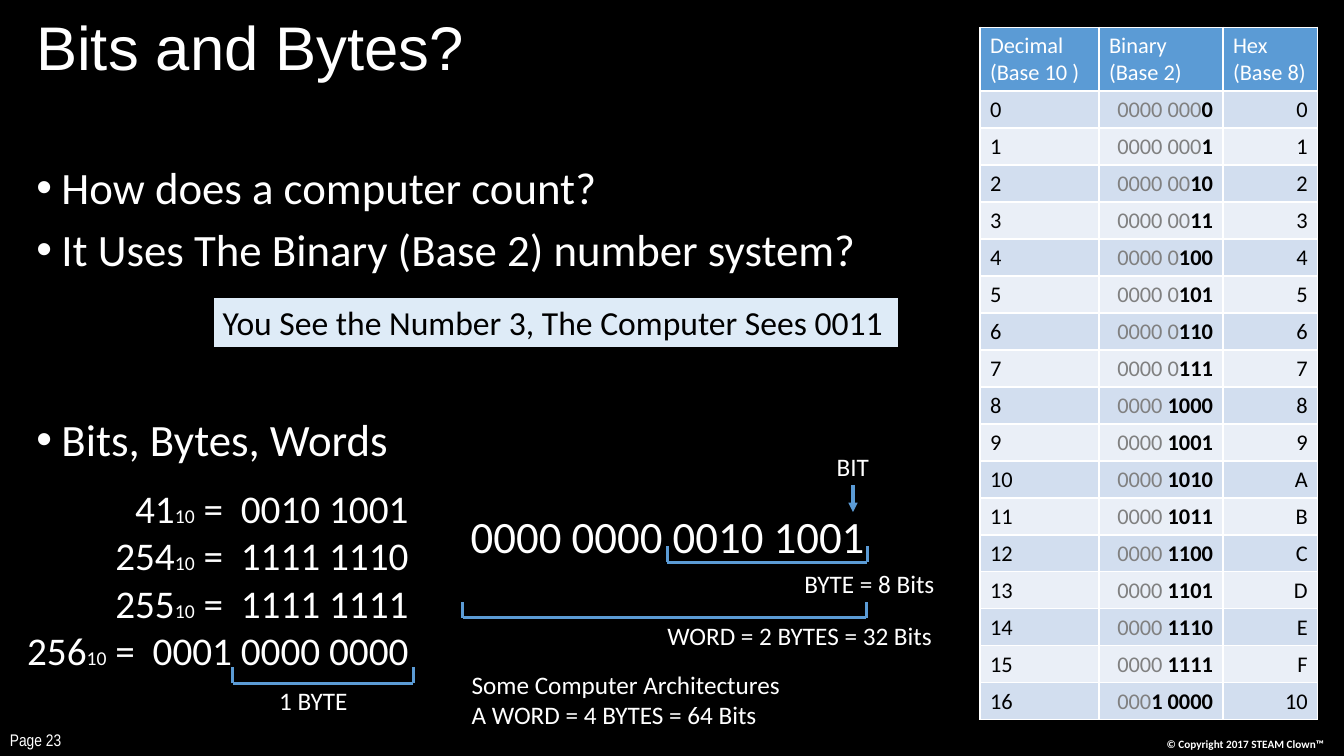
import pptx
import pptx.dml.color
import pptx.enum.shapes
import pptx.enum.text
import pptx.oxml
import pptx.oxml.ns
import pptx.util

RGBColor = pptx.dml.color.RGBColor
Align = pptx.enum.text.PP_ALIGN
AutoSize = pptx.enum.text.MSO_AUTO_SIZE
Anchor = pptx.enum.text.MSO_ANCHOR

BLACK = RGBColor(0x00, 0x00, 0x00)
WHITE = RGBColor(0xFF, 0xFF, 0xFF)
GREY = RGBColor(0x80, 0x80, 0x80)
BLUE = RGBColor(0x5B, 0x9B, 0xD5)
PALE_BLUE = RGBColor(0xDE, 0xEB, 0xF7)
BAND_DARK = RGBColor(0xD2, 0xDE, 0xEF)
BAND_LIGHT = RGBColor(0xEA, 0xEF, 0xF7)

EMU_PER_PX = 9144  # 100 px to the inch


def px(length):
    return pptx.util.Emu(length * EMU_PER_PX)


def add_xml(parent, xml, index=None):
    tag, rest = xml.split(" ", 1) if " " in xml else (xml, "")
    element = pptx.oxml.parse_xml(f"<a:{tag} {pptx.oxml.ns.nsdecls('a')} {rest}")
    parent.insert(len(parent) if index is None else index, element)


def format_font(font, size, color=WHITE, name="Calibri", bold=False):
    values = {"name": name, "size": pptx.util.Pt(size), "bold": bold}
    for attribute, value in values.items():
        setattr(font, attribute, value)
    font.color.rgb = color


def add_run(paragraph, text, size, **formats):
    run = paragraph.add_run()
    run.text = text
    format_font(run.font, size, **formats)


def place(shape, box):
    for attribute, length in zip(("left", "top", "width", "height"), box):
        setattr(shape, attribute, px(length))


def fill_frame(frame, lines, wrap, align=Align.LEFT):
    """Write one paragraph per line, each a list of (text, size, formats) runs."""
    values = {"word_wrap": wrap, "auto_size": AutoSize.SHAPE_TO_FIT_TEXT,
              "vertical_anchor": Anchor.TOP}
    for attribute, value in values.items():
        setattr(frame, attribute, value)
    for index, runs in enumerate(lines):
        paragraph = frame.add_paragraph() if index else frame.paragraphs[0]
        paragraph.alignment = align
        for text, size, formats in runs:
            add_run(paragraph, text, size, **formats)


def add_label(slide, box, *texts, size=18, wrap=False, **formats):
    label = slide.shapes.add_textbox(*map(px, box))
    fill_frame(label.text_frame, [[(text, size, formats)] for text in texts], wrap)
    return label


def add_line(slide, start, end, arrow=False):
    line = slide.shapes.add_connector(
        pptx.enum.shapes.MSO_CONNECTOR.STRAIGHT, *map(px, (*start, *end)))
    line.line.color.rgb = BLUE
    line.line.width = pptx.util.Pt(2.25)
    properties = line.element.spPr
    if arrow:
        add_xml(properties.find(pptx.oxml.ns.qn("a:ln")), 'tailEnd type="triangle"/>')
    add_xml(properties, "effectLst />")


def add_bracket(slide, left, right, bottom, tick=16):
    add_line(slide, (left, bottom), (right, bottom))
    for x in (left, right):
        add_line(slide, (x, bottom), (x, bottom - tick))


def add_title(slide, box):
    title = slide.shapes.title
    place(title, box)
    title.text_frame.vertical_anchor = Anchor.TOP
    title.text_frame.auto_size = AutoSize.NONE
    paragraph = title.text_frame.paragraphs[0]
    paragraph.alignment = Align.LEFT
    paragraph.line_spacing = 0.9
    add_run(paragraph, "Bits and Bytes?", 44, name="Arial")


def add_bullets(slide, box):
    body = slide.placeholders[1]
    place(body, box)
    frame = body.text_frame
    frame.auto_size = AutoSize.NONE
    bullets = (("How does a computer count?", 0),
               ("It Uses The Binary (Base 2) number system?", 10),
               ("Bits, Bytes, Words", 101))
    for index, (text, space_before) in enumerate(bullets):
        paragraph = frame.add_paragraph() if index else frame.paragraphs[0]
        properties = paragraph._p.get_or_add_pPr()
        properties.set("marL", str(px(25)))
        properties.set("indent", str(px(-25)))
        add_xml(properties, 'buFont typeface="Arial"/>')
        add_xml(properties, 'buChar char="•"/>')
        paragraph.line_spacing = 0.9
        paragraph.space_before = pptx.util.Pt(space_before)
        add_run(paragraph, text, 32)


def add_callout(slide, box):
    callout = slide.shapes.add_shape(
        pptx.enum.shapes.MSO_SHAPE.RECTANGLE, *map(px, box))
    callout.shadow.inherit = False
    callout.fill.solid()
    callout.fill.fore_color.rgb = PALE_BLUE
    callout.line.color.rgb = BLACK
    callout.line.width = pptx.util.Pt(1.5)
    text = "You See the Number 3, The Computer Sees 0011"
    fill_frame(callout.text_frame, [[(text, 24, {"color": BLACK})]], wrap=False)


def fill_cell(cell, fill, runs, align=Align.LEFT):
    properties = cell._tc.get_or_add_tcPr()
    for side in "LRTB":
        add_xml(properties, f'ln{side} w="12700"><a:solidFill>'
                            f'<a:srgbClr val="{WHITE}"/></a:solidFill></a:ln{side}>')
    cell.fill.solid()
    cell.fill.fore_color.rgb = fill
    paragraph = cell.text_frame.paragraphs[0]
    paragraph.alignment = align
    for text, formats in runs:
        add_run(paragraph, text, 16, **formats)


def add_number_table(slide, box, count=17):
    """Count in decimal, binary and hex, with the leading zeros in grey."""
    table = slide.shapes.add_table(count + 1, 3, *map(px, box)).table
    table.first_row = table.horz_banding = False
    for column, width in zip(table.columns, (118, 123, 94)):
        column.width = px(width)
    for index, row in enumerate(table.rows):
        row.height = px(36 if index else 63)
    headings = ("Decimal (Base 10 )", "Binary (Base 2)", "Hex (Base 8)")
    for column, heading in enumerate(headings):
        fill_cell(table.cell(0, column), BLUE, [(heading, {})])
    black = {"color": BLACK}
    for number in range(count):
        bits = f"{number >> 4:04b} {number & 15:04b}"
        significant = bits.lstrip("0 ") or "0"
        zeros = bits[:-len(significant)]
        columns = (
            ([(str(number), black)], Align.LEFT),
            ([(zeros, {"color": GREY}), (significant, {**black, "bold": True})],
             Align.RIGHT),
            ([(f"{number:X}", black)], Align.RIGHT))
        band = BAND_LIGHT if number % 2 else BAND_DARK
        for column, (runs, align) in enumerate(columns):
            fill_cell(table.cell(number + 1, column), band, runs, align)


def add_conversions(slide, left, top):
    conversions = (("41", "0010 1001"), ("254", "1111 1110"),
                   ("255", "1111 1111"), ("256", "0001 0000 0000"))
    lines = [[(decimal, 28, {}), ("10", 14, {}), (f" =  {binary}", 28, {})]
             for decimal, binary in conversions]
    box = slide.shapes.add_textbox(*map(px, (left, top, 404, 200)))
    fill_frame(box.text_frame, lines, wrap=False, align=Align.RIGHT)
    add_bracket(slide, left + 220, left + 399, top + 202)
    add_label(slide, (left + 256, top + 199, 89, 40), "1 BYTE")


def add_word_diagram(slide, left, top):
    add_label(slide, (left + 363, top, 52, 40), "BIT")
    add_line(slide, (left + 389, top + 38), (left + 389, top + 65), arrow=True)
    add_label(slide, (left, top + 57, 415, 64), "0000 0000 0010 1001", size=32)
    add_bracket(slide, left + 205, left + 403, top + 115)
    add_label(slide, (left + 331, top + 116, 150, 40), "BYTE = 8 Bits", wrap=True)
    add_bracket(slide, left + 2, left + 402, top + 170)
    add_label(slide, (left + 195, top + 167, 285, 40), "WORD = 2 BYTES = 32 Bits")
    add_label(slide, (left + 1, top + 216, 336, 71),
              "Some Computer Architectures", "A WORD = 4 BYTES = 64 Bits")


def add_footer(slide, top):
    add_label(slide, (0, top, 112, 29), "Page 23",
              size=12, wrap=True, name="Arial Narrow")
    notice = add_label(slide, (1157, top + 6, 176, 25),
                       "© Copyright 2017 STEAM Clown™", size=8, wrap=True, bold=True)
    notice.text_frame.margin_left = 0
    notice.text_frame.paragraphs[0].line_spacing = 1.1


def main():
    presentation = pptx.Presentation()
    presentation.slide_width, presentation.slide_height = px(1333), px(750)
    slide = presentation.slides.add_slide(presentation.slide_layouts[1])
    slide.background.fill.solid()
    slide.background.fill.fore_color.rgb = BLACK
    add_footer(slide, 719)
    add_title(slide, (26, 12, 1279, 137))
    add_bullets(slide, (26, 159, 1279, 516))
    add_callout(slide, (211, 295, 681, 50))
    add_number_table(slide, (972, 27, 335, 675))
    add_word_diagram(slide, 457, 443)
    add_conversions(slide, 11, 476)
    presentation.save("out.pptx")


if __name__ == "__main__":
    main()
